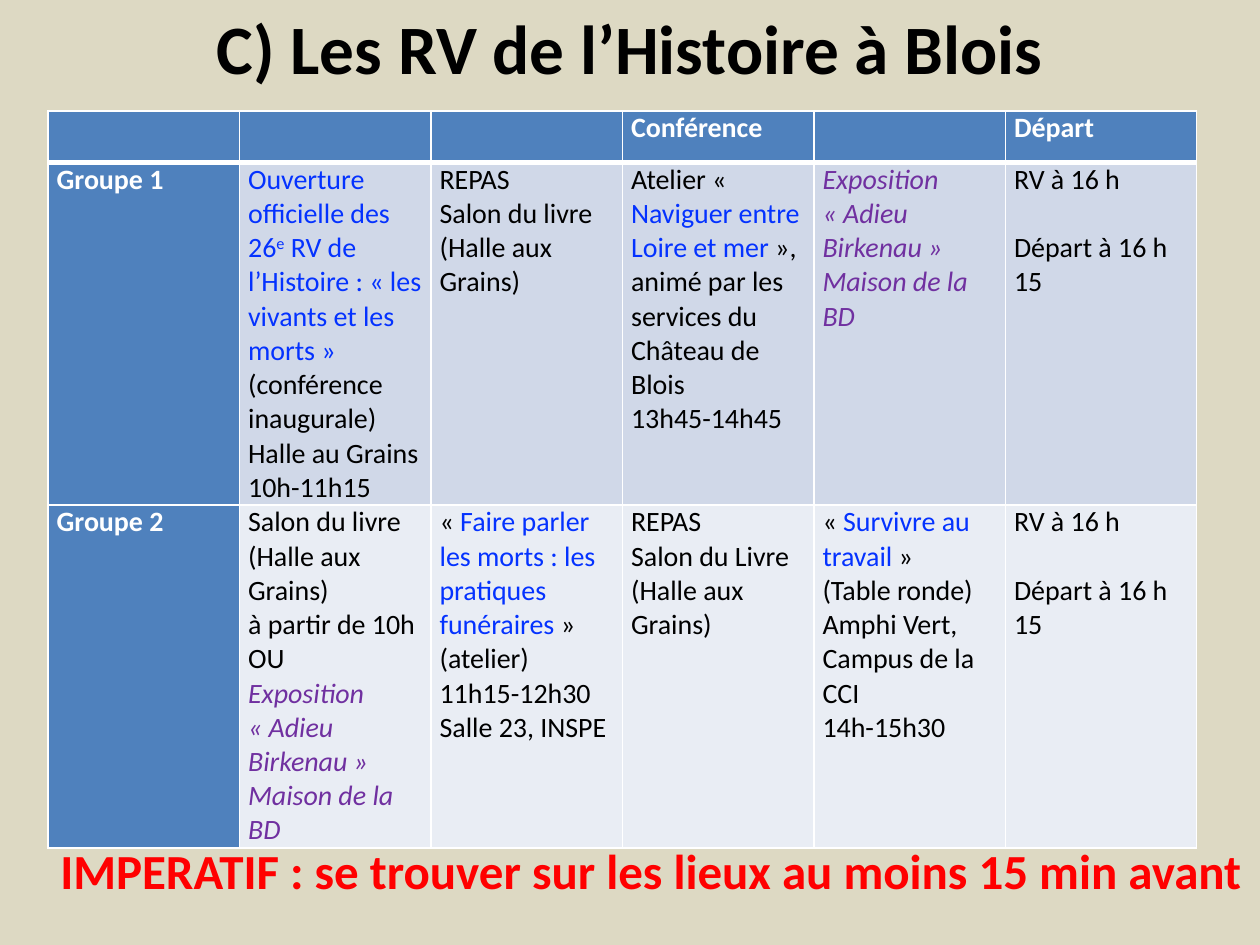
from lxml import etree
from pptx import Presentation
from pptx import util as u
from pptx.dml.color import RGBColor
from pptx.enum import text
from pptx.oxml import ns

BLACK, WHITE, BLUE, PURPLE, RED = "000000", "FFFFFF", "0432FF", "7030A0", "FF0000"
HEADER = "4F81BD"
BANDS = [HEADER, "D0D8E8", "E9EDF4"]


def style(r, size, color, bold=False, italic=False):
    f = r.font
    f.name, f.size, f.bold, f.italic = "Calibri", u.Pt(size), bold, italic
    f.color.rgb = RGBColor.from_string(color)


def border(cell, bottom):
    """Draw white cell edges, 1 pt except the bottom one."""
    tcPr = cell._tc.get_or_add_tcPr()
    widths = {"lnL": 1, "lnR": 1, "lnT": 1, "lnB": bottom}
    for i, (tag, width) in enumerate(widths.items()):
        ln = etree.Element(ns.qn("a:" + tag), w=str(u.Pt(width)))
        fill = etree.SubElement(ln, ns.qn("a:solidFill"))
        etree.SubElement(fill, ns.qn("a:srgbClr"), val=WHITE)
        tcPr.insert(i, ln)


prs = Presentation()
prs.slide_width, prs.slide_height = u.Inches(10), u.Inches(7.5)
s = prs.slides.add_slide(prs.slide_layouts[6])
s.background.fill.solid()
s.background.fill.fore_color.rgb = RGBColor.from_string("DDD9C3")

# Each cell lists its paragraphs: a string, or a list of (text, colour) runs
exposition = [[(t, PURPLE)] for t in ("Exposition", "« Adieu Birkenau »", "Maison de la BD")]
depart = ["RV à 16 h", "Départ à 16 h 15"]
rows = [
    [[], [], [], ["Conférence"], [], ["Départ"]],
    [
        ["Groupe 1"],
        [[("Ouverture officielle des 26", BLUE), ("e", BLUE),
          (" RV de l’Histoire : « les vivants et les morts » ", BLUE),
          ("(conférence inaugurale)", BLACK)],
         "Halle au Grains", "10h-11h15"],
        ["REPAS", "Salon du livre", "(Halle aux Grains)"],
        [[("Atelier « ", BLACK), ("Naviguer entre Loire et mer ", BLUE),
          ("», animé par les services du Château de Blois", BLACK)],
         "13h45-14h45"],
        exposition,
        depart,
    ],
    [
        ["Groupe 2"],
        ["Salon du livre", "(Halle aux Grains)", "à partir de 10h", "OU"] + exposition,
        [[("« ", BLACK), ("Faire parler les morts : les pratiques funéraires ", BLUE),
          ("»", BLACK)],
         "(atelier)", "11h15-12h30", "Salle 23, INSPE"],
        ["REPAS", "Salon du Livre (Halle aux Grains)"],
        [[("« ", BLACK), ("Survivre au travail ", BLUE), ("»", BLACK)],
         "(Table ronde)", "Amphi Vert,", "Campus de la CCI", "14h-15h30"],
        depart,
    ],
]

table = s.shapes.add_table(3, 6, u.Inches(0.38), u.Inches(0.88),
                           u.Inches(9.12), u.Inches(5.85)).table
for col in table.columns:
    col.width = u.Inches(1.52)
for row, height in zip(table.rows, (0.41, 2.72, 2.72)):
    row.height = u.Inches(height)

for i, row in enumerate(rows):
    for j, paragraphs in enumerate(row):
        cell = table.cell(i, j)
        heading = i == 0 or j == 0
        cell.margin_left = cell.margin_right = u.Inches(0.07)
        cell.margin_top = cell.margin_bottom = 0
        cell.fill.solid()
        cell.fill.fore_color.rgb = RGBColor.from_string(HEADER if heading else BANDS[i])
        border(cell, 3 if i == 0 else 1)
        tf = cell.text_frame
        for n, runs in enumerate(paragraphs):
            p = tf.add_paragraph() if n else tf.paragraphs[0]
            if isinstance(runs, str):
                runs = [(runs, WHITE if heading else BLACK)]
            for words, color in runs:
                r = p.add_run()
                r.text = words
                style(r, 16, color, heading, color == PURPLE)
                if words == "e":
                    r.font._element.set("baseline", "30000")
        if paragraphs is depart:
            p.space_before = u.Pt(19.5)

captions = [
    ("C) Les RV de l’Histoire à Blois", (0.5, 0.05, 9, 0.64), 39.6, BLACK, True),
    ("IMPERATIF : se trouver sur les lieux au moins 15 min avant",
     (0.38, 6.62, 9.78, 0.57), 28, RED, False),
]
for words, box, size, color, is_title in captions:
    tf = s.shapes.add_textbox(*map(u.Inches, box)).text_frame
    tf.text = words
    tf.word_wrap = is_title
    p = tf.paragraphs[0]
    if is_title:
        tf.vertical_anchor = text.MSO_ANCHOR.MIDDLE
        p.alignment = text.PP_ALIGN.CENTER
    style(p.runs[0], size, color, bold=True)

prs.save("out.pptx")
